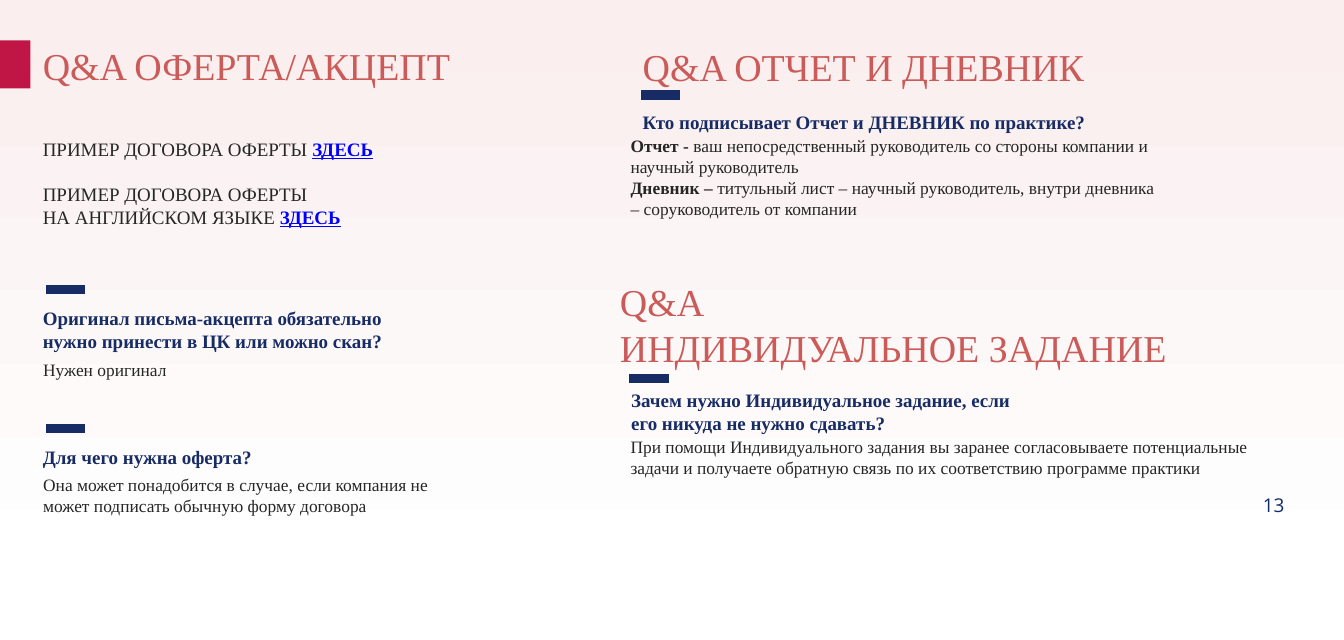
"""Build the questions and answers slide about offers, reports and assignments."""
from dataclasses import dataclass
from typing import Any

import pptx
import pptx.dml.color
import pptx.enum.dml
import pptx.enum.shapes
import pptx.oxml
import pptx.slide
import pptx.text.text
import pptx.util

CORAL = pptx.dml.color.RGBColor(0xCB, 0x5B, 0x59)
NAVY = pptx.dml.color.RGBColor(0x17, 0x2C, 0x65)
INK = pptx.dml.color.RGBColor(0x26, 0x26, 0x26)
LINK_BLUE = pptx.dml.color.RGBColor(0x00, 0x00, 0xFF)
NUMBER_BLUE = pptx.dml.color.RGBColor(0x10, 0x2D, 0x69)
CRIMSON = pptx.dml.color.RGBColor(0xC0, 0x16, 0x46)
WHITE = pptx.dml.color.RGBColor(0xFF, 0xFF, 0xFF)
BLUSH = pptx.dml.color.RGBColor(0xFA, 0xEE, 0xEE)

SLIDE_WIDTH = 850.32
SLIDE_HEIGHT = 404.64
SERIF = "Times New Roman"
DASH_LENGTH = 24.8
DASH_WEIGHT = 6


@dataclass(frozen=True)
class Style:
    """Hold the font, colour and box insets of one kind of text."""
    size: float
    color: pptx.dml.color.RGBColor
    bold: bool = False
    underline: bool = False
    name: str = SERIF
    inset_x: float = 1.2
    inset_y: float = 0.7


TITLE = Style(24, CORAL)
QUESTION = Style(12, NAVY, bold=True)
ANSWER = Style(11, INK, inset_x=7.9, inset_y=3.6)
ANSWER_BOLD = Style(11, INK, bold=True)
EXAMPLE = Style(12, INK)
LINK = Style(12, LINK_BLUE, bold=True, underline=True)
NUMBER = Style(12, NUMBER_BLUE, name="Open Sans", inset_x=2, inset_y=0)


@dataclass(frozen=True)
class Span:
    """Hold text whose style differs from that of its block."""
    text: str
    style: Style


@dataclass(frozen=True)
class Para:
    """Hold the spans of a paragraph and the space before it."""
    spans: tuple[str | Span, ...]
    space_before: float = 0


@dataclass(frozen=True)
class Block:
    """Hold the place, style and paragraphs of a text box."""
    left: float
    top: float
    width: float
    height: float
    style: Style
    paras: tuple[Para, ...]


@dataclass(frozen=True)
class Dash:
    """Hold the left end and height of a short thick line."""
    left: float
    y: float


BLOCKS = (
    Block(391, 175.7, 399, 44, TITLE, (
        Para(("Q&A",)), Para(("ИНДИВИДУАЛЬНОЕ ЗАДАНИЕ",)))),
    Block(405.4, 26.8, 325.4, 44, TITLE, (Para(("Q&A ОТЧЕТ И ДНЕВНИК",)),)),
    Block(25.9, 26.3, 325.4, 59, TITLE, (Para(("Q&A ОФЕРТА/АКЦЕПТ",)),)),
    Block(25.9, 86.4, 267.8, 62, EXAMPLE, (
        Para(("ПРИМЕР ДОГОВОРА ОФЕРТЫ ", Span("ЗДЕСЬ", LINK))),
        Para(("ПРИМЕР ДОГОВОРА ОФЕРТЫ",), space_before=14),
        Para(("НА АНГЛИЙСКОМ ЯЗЫКЕ ", Span("ЗДЕСЬ", LINK))))),
    Block(25.9, 193, 243.4, 26.6, QUESTION, (
        Para(("Оригинал письма-акцепта обязательно нужно принести в ЦК "
              "или можно скан?",)),)),
    Block(19.4, 223.2, 282.2, 20.9, ANSWER, (Para(("Нужен оригинал",)),)),
    Block(25.9, 280.8, 260.6, 26.6, QUESTION, (
        Para(("Для чего нужна оферта?",)),)),
    Block(19.4, 296.1, 267.8, 33.8, ANSWER, (
        Para(("Она может понадобится в случае, если компания не может "
              "подписать обычную форму договора",)),)),
    Block(405.4, 69.5, 315.4, 26.6, QUESTION, (
        Para(("Кто подписывает Отчет и ДНЕВНИК по практике?",)),)),
    Block(391, 82.1, 344.2, 74.2, ANSWER, (
        Para((Span("Отчет - ", ANSWER_BOLD),
              "ваш непосредственный руководитель со стороны компании и "
              "научный руководитель")),
        Para((Span("Дневник –", ANSWER_BOLD),
              " титульный лист – научный руководитель, внутри дневника – "
              "соруководитель от компании")))),
    Block(398.2, 245, 242.6, 26.6, QUESTION, (
        Para(("Зачем нужно Индивидуальное задание, если его никуда не нужно "
              "сдавать?",)),)),
    Block(391, 272.2, 406, 47.5, ANSWER, (
        Para(("При помощи Индивидуального задания вы заранее согласовываете "
              "потенциальные задачи и получаете обратную связь по их "
              "соответствию программе практики",)),)),
    Block(797, 312.1, 25.2, 14.4, NUMBER, (Para(("13",)),)),
)

DASHES = (Dash(28.8, 182.9), Dash(28.8, 270.8), Dash(405.4, 60.2), Dash(398.2, 239.2))


def apply_format(target: Any, values: dict[str, Any]) -> None:
    """Set every named attribute of the target."""
    for name, value in values.items():
        setattr(target, name, value)


def paint_background(page: pptx.slide.Slide) -> None:
    """Fade the page from white at the bottom to blush at the top."""
    fill = page.background.fill
    fill.gradient()
    fill.gradient_angle = 90
    for stop, position, color in zip(fill.gradient_stops, (0.09, 1), (WHITE, BLUSH)):
        stop.position = position
        stop.color.rgb = color


def add_marker(page: pptx.slide.Slide) -> None:
    """Draw the crimson block at the left edge."""
    marker = page.shapes.add_shape(
        pptx.enum.shapes.MSO_SHAPE.RECTANGLE,
        *map(pptx.util.Pt, (0, 25.5, 19.2, 30.4)))
    marker.shadow.inherit = False
    marker.fill.solid()
    marker.fill.fore_color.rgb = CRIMSON
    marker.line.fill.background()


def add_dash(page: pptx.slide.Slide, dash: Dash) -> None:
    """Draw one short navy line."""
    line = page.shapes.add_connector(
        pptx.enum.shapes.MSO_CONNECTOR.STRAIGHT,
        *map(pptx.util.Pt, (dash.left + DASH_LENGTH, dash.y, dash.left, dash.y)))
    line.line.width = pptx.util.Pt(DASH_WEIGHT)
    line.line.color.rgb = NAVY
    line._element.spPr.append(pptx.oxml.parse_xml(
        '<a:effectLst xmlns:a="http://schemas.openxmlformats.org/drawingml/2006/main"/>'))


def add_span(para: pptx.text.text._Paragraph, text: str, style: Style) -> None:
    """Add one run of text in the given style."""
    font_format = {"name": style.name, "size": pptx.util.Pt(style.size),
                   "bold": style.bold, "underline": style.underline}
    run = para.add_run()
    run.text = text
    apply_format(run.font, font_format)
    run.font.color.rgb = style.color


def add_block(page: pptx.slide.Slide, block: Block) -> None:
    """Draw one text box with its paragraphs."""
    box = page.shapes.add_textbox(*map(
        pptx.util.Pt, (block.left, block.top, block.width, block.height)))
    inset_x, inset_y = map(pptx.util.Pt, (block.style.inset_x, block.style.inset_y))
    apply_format(box.text_frame, {
        "word_wrap": True, "margin_left": inset_x, "margin_right": 0,
        "margin_top": inset_y, "margin_bottom": inset_y})
    for index, item in enumerate(block.paras):
        para = box.text_frame.add_paragraph() if index else box.text_frame.paragraphs[0]
        para.space_before = pptx.util.Pt(item.space_before)
        for span in item.spans:
            if isinstance(span, Span):
                add_span(para, span.text, span.style)
            else:
                add_span(para, span, block.style)


def main() -> None:
    """Build and save the deck."""
    deck = pptx.Presentation()
    deck.slide_width = pptx.util.Pt(SLIDE_WIDTH)
    deck.slide_height = pptx.util.Pt(SLIDE_HEIGHT)
    page = deck.slides.add_slide(deck.slide_layouts[6])
    paint_background(page)
    add_marker(page)
    for dash in DASHES:
        add_dash(page, dash)
    for block in BLOCKS:
        add_block(page, block)
    deck.save("out.pptx")


if __name__ == "__main__":
    main()
